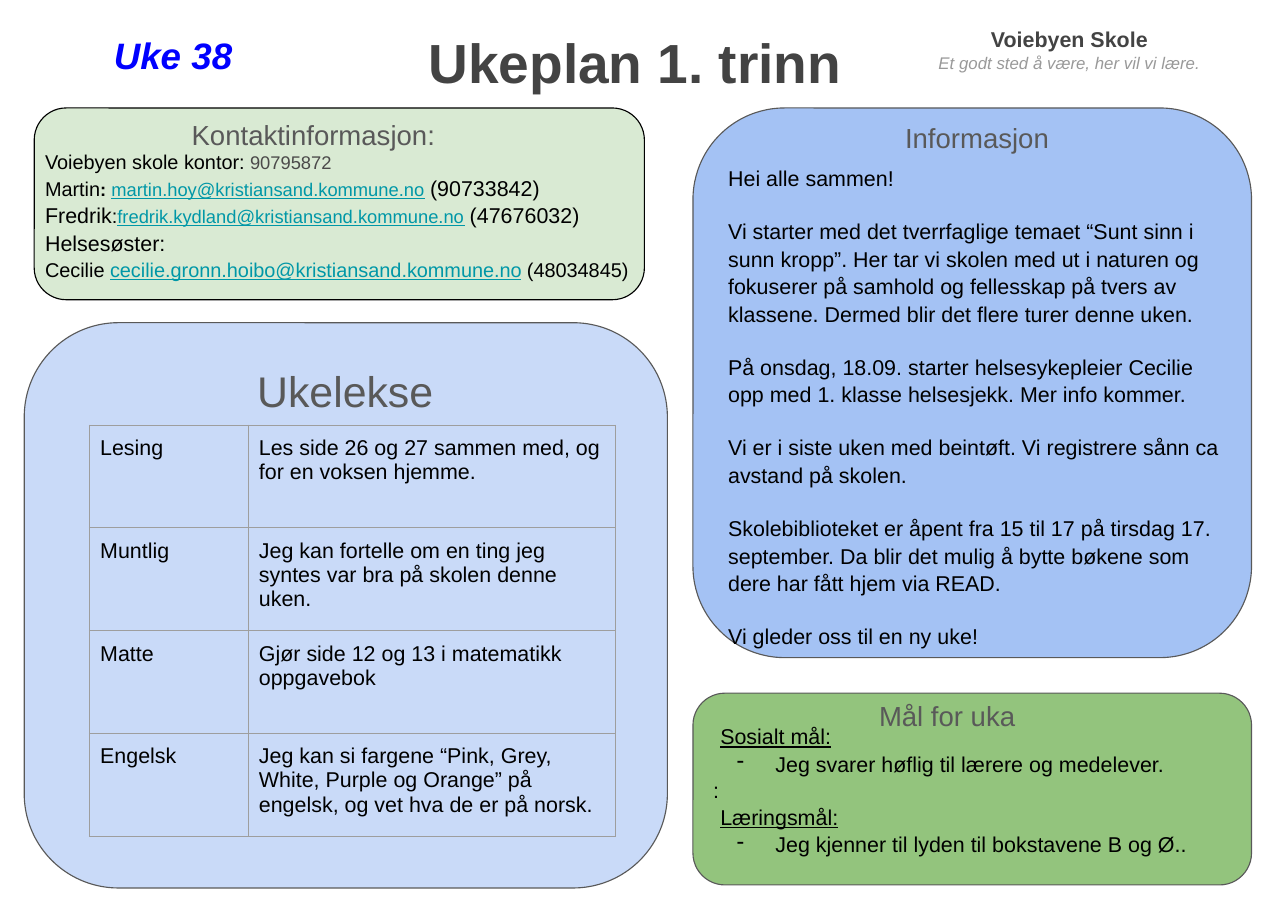
from lxml.etree import SubElement
from pptx import Presentation
from pptx.dml.color import RGBColor
from pptx.enum.shapes import MSO_SHAPE
from pptx.enum.text import MSO_ANCHOR, MSO_AUTO_SIZE, PP_ALIGN
from pptx.oxml.ns import qn
from pptx.util import Cm, Pt

FONT = "Arial"
BLACK, GREY, DARK, TEAL = "000000", "595959", "434343", "0097A7"
LINE_SPACING = 1.07
EMPTY_LINE = 16.8
INSET = Cm(0.25)

# Boxes are left, top, width, height in cm
TITLE, TITLE_BOX = "Ukeplan 1. trinn", (9.63, 0.3, 10.44, 1.75)

PANELS = {
    "contact": ((0.79, 2.49, 14.07, 4.42), "D9EAD3", BLACK),
    "homework": ((0.56, 7.44, 14.83, 13.03), "C9DAF8", GREY),
    "information": ((15.98, 2.49, 12.88, 12.67), "A4C2F4", GREY),
    "goals": ((15.98, 15.98, 12.88, 4.42), "93C47D", GREY),
}

HEADINGS = [
    ("Uke 38", (1.4, 0.43, 5.18, 1.5),
     dict(size=24, color="0000FF", bold=True, italic=True, align=PP_ALIGN.CENTER)),
    ("Ukelekse", (5.0, 8.08, 5.92, 1.7), dict(size=28, color=GREY, align=PP_ALIGN.CENTER)),
    ("Informasjon", (20.62, 2.49, 4.32, 0.89), dict(size=18, color=GREY)),
    ("Mål for uka", (20.02, 15.82, 5.54, 0.89), dict(size=18, color=GREY)),
    ("Kontaktinformasjon:", (4.17, 2.41, 6.6, 1.04), dict(size=18, color=GREY)),
]

SCHOOL_BOX = (20.47, 0.3, 8.38, 2.18)
SCHOOL = [
    ("Voiebyen Skole", dict(size=14, color=DARK, bold=True)),
    ("Et godt sted å være, her vil vi lære.", dict(size=11, color="999999", italic=True)),
]

EMAIL = dict(size=12, color=TEAL, underline=True)
CONTACT_BOX = (0.79, 3.15, 14.6, 3.43)
CONTACTS = [
    [("Voiebyen skole kontor: ", dict(size=13)), ("90795872", dict(size=12, color="4B4A4A"))],
    [("Martin", dict(size=13)), (": ", dict(size=12, bold=True)),
     ("martin.hoy@kristiansand.kommune.no", EMAIL),
     (" ", dict(size=12)), ("(90733842)", {})],
    [("Fredrik", {}), (":", dict(size=13)),
     ("fredrik.kydland@kristiansand.kommune.no", EMAIL),
     (" ", dict(size=12)), ("(47676032)", {})],
    [("Helsesøster:", {})],
    [("Cecilie ", dict(size=13)),
     ("cecilie.gronn.hoibo@kristiansand.kommune.no", {**EMAIL, "size": 13}),
     (" (48034845)", dict(size=13))],
]

INFORMATION_BOX = (16.54, 3.51, 11.94, 11.28)
INFORMATION = [
    "Hei alle sammen!",
    "Vi starter med det tverrfaglige temaet “Sunt sinn i sunn kropp”. Her tar vi skolen med "
    "ut i naturen og fokuserer på samhold og fellesskap på tvers av klassene. Dermed blir det "
    "flere turer denne uken.",
    "På onsdag, 18.09. starter helsesykepleier Cecilie opp med 1. klasse helsesjekk. "
    "Mer info kommer.",
    "Vi er i siste uken med beintøft. Vi registrere sånn ca avstand på skolen.",
    "Skolebiblioteket er åpent fra 15 til 17 på tirsdag 17. september. Da blir det mulig å "
    "bytte bøkene som dere har fått hjem via READ.",
    "Vi gleder oss til en ny uke!",
]

GOALS_BOX = (16.36, 16.38, 12.14, 4.11)
GOALS = [
    ("Sosialt mål:", "Jeg svarer høflig til lærere og medelever."),
    ("Læringsmål:", "Jeg kjenner til lyden til bokstavene B og Ø.."),
]

HOMEWORK_LEFT, HOMEWORK_TOP = 2.06, 9.8
HOMEWORK_COLUMNS, HOMEWORK_ROW = (3.66, 8.48), 2.37
HOMEWORK = [
    ("Lesing", "Les side 26 og 27 sammen med, og for en voksen hjemme."),
    ("Muntlig", "Jeg kan fortelle om en ting jeg syntes var bra på skolen denne uken."),
    ("Matte", "Gjør side 12 og 13 i matematikk oppgavebok"),
    ("Engelsk", "Jeg kan si fargene “Pink, Grey, White, Purple og Orange” på engelsk, "
                "og vet hva de er på norsk."),
]


def rgb(color):
    return RGBColor.from_string(color)


def place(box):
    return [Cm(length) for length in box]


def write(frame, text, align=PP_ALIGN.LEFT, before=0, spacing=LINE_SPACING, bullet=None, **style):
    """Add one paragraph; text is a string or a list of (string, run format)."""
    paragraph = frame.paragraphs[0]
    if paragraph.runs:
        paragraph = frame.add_paragraph()
    if bullet:
        properties = paragraph._p.get_or_add_pPr()
        properties.set("marL", str(Cm(1.27)))
        properties.set("indent", str(-Cm(0.89)))
        SubElement(properties, qn("a:buChar"), char=bullet)
    paragraph.alignment = align
    paragraph.line_spacing = spacing
    paragraph.space_before = Pt(before)
    runs = [(text, {})] if isinstance(text, str) else text
    for words, run_style in runs:
        look = {"size": 14, "color": BLACK, **style, **run_style}
        run = paragraph.add_run()
        run.text = words
        font = run.font
        font.name = FONT
        font.size = Pt(look["size"])
        font.color.rgb = rgb(look["color"])
        font.bold = look.get("bold", False)
        font.italic = look.get("italic", False)
        font.underline = look.get("underline", False)


def set_frame(frame, anchor=MSO_ANCHOR.TOP):
    frame.word_wrap = True
    frame.auto_size = MSO_AUTO_SIZE.NONE
    frame.vertical_anchor = anchor
    frame.margin_left = frame.margin_right = INSET
    frame.margin_top = frame.margin_bottom = INSET
    return frame


def add_frame(slide, box):
    return set_frame(slide.shapes.add_textbox(*place(box)).text_frame)


def add_panel(slide, box, fill, line):
    panel = slide.shapes.add_shape(MSO_SHAPE.FLOWCHART_ALTERNATE_PROCESS, *place(box))
    panel.shadow.inherit = False
    panel.fill.solid()
    panel.fill.fore_color.rgb = rgb(fill)
    panel.line.color.rgb = rgb(line)
    panel.line.width = Pt(0.75)
    return panel


def set_borders(cell, color):
    properties = cell._tc.get_or_add_tcPr()
    for position, side in enumerate(("a:lnL", "a:lnR", "a:lnT", "a:lnB")):
        line = SubElement(properties, qn(side), w=str(Pt(0.75)))
        SubElement(SubElement(line, qn("a:solidFill")), qn("a:srgbClr"), val=color)
        properties.insert(position, line)


def add_homework(slide):
    table = slide.shapes.add_table(
        len(HOMEWORK), len(HOMEWORK_COLUMNS), Cm(HOMEWORK_LEFT), Cm(HOMEWORK_TOP),
        Cm(sum(HOMEWORK_COLUMNS)), Cm(HOMEWORK_ROW * len(HOMEWORK))).table
    table.first_row = table.horz_banding = False
    for column, width in zip(table.columns, HOMEWORK_COLUMNS):
        column.width = Cm(width)
    for row, texts in zip(table.rows, HOMEWORK):
        row.height = Cm(HOMEWORK_ROW)
        for cell, text in zip(row.cells, texts):
            cell.fill.background()
            cell.margin_left = cell.margin_right = INSET
            cell.margin_top = cell.margin_bottom = INSET
            set_borders(cell, "9E9E9E")
            write(cell.text_frame, text, spacing=1.0)


def main():
    presentation = Presentation()
    presentation.slide_width, presentation.slide_height = Cm(29.7), Cm(21)
    slide = presentation.slides.add_slide(presentation.slide_layouts[5])

    title = slide.shapes.title
    title.left, title.top, title.width, title.height = place(TITLE_BOX)
    write(set_frame(title.text_frame), TITLE, size=36, color=DARK, bold=True)

    panels = {name: add_panel(slide, *panel) for name, panel in PANELS.items()}
    write(set_frame(panels["goals"].text_frame, MSO_ANCHOR.MIDDLE), ":")

    for heading, box, style in HEADINGS:
        write(add_frame(slide, box), heading, **style)
    school = add_frame(slide, SCHOOL_BOX)
    for line, style in SCHOOL:
        write(school, line, align=PP_ALIGN.CENTER, **style)
    contacts = add_frame(slide, CONTACT_BOX)
    for contact in CONTACTS:
        write(contacts, contact)
    information = add_frame(slide, INFORMATION_BOX)
    for index, message in enumerate(INFORMATION):
        write(information, message, before=EMPTY_LINE if index else 0)
    goals = add_frame(slide, GOALS_BOX)
    for index, (kind, goal) in enumerate(GOALS):
        write(goals, kind, before=EMPTY_LINE if index else 0, underline=True)
        write(goals, goal, bullet="-")
    add_homework(slide)
    presentation.save("out.pptx")


if __name__ == "__main__":
    main()
